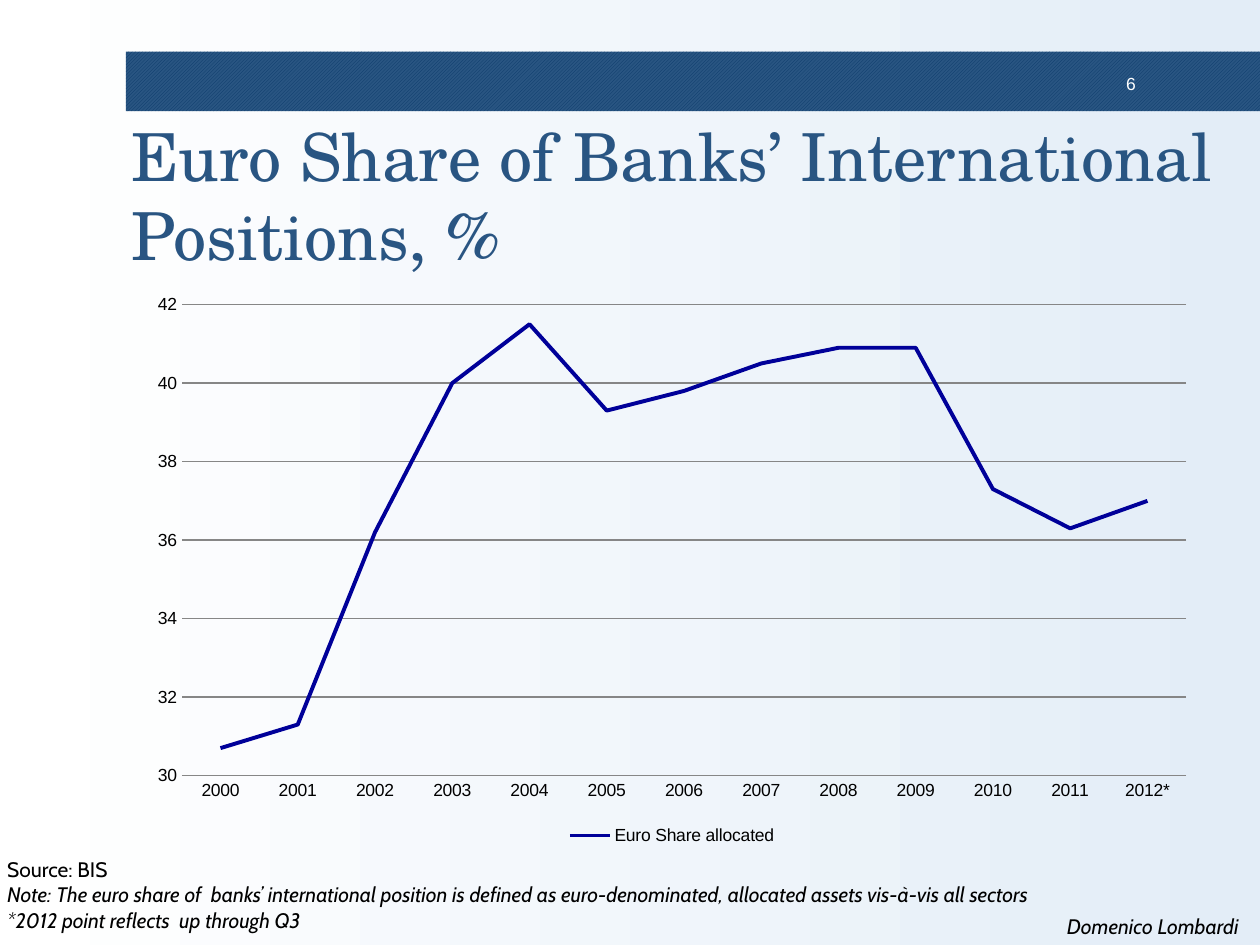
from dataclasses import dataclass

from pptx import Presentation
from pptx.chart.data import CategoryChartData
from pptx.dml.color import RGBColor as Rgb
from pptx.enum.chart import XL_CHART_TYPE as ChartType, XL_LEGEND_POSITION as LegendSide
from pptx.enum.chart import XL_MARKER_STYLE as Marker, XL_TICK_MARK as Tick
from pptx.enum.dml import MSO_PATTERN as Pattern
from pptx.enum.shapes import MSO_SHAPE as Shape
from pptx.enum.text import MSO_ANCHOR as Anchor, PP_ALIGN as Align
from pptx.util import Pt


@dataclass(frozen=True)
class Theme:
    black: Rgb = Rgb.from_string("000000")
    white: Rgb = Rgb.from_string("FFFFFF")
    pale: Rgb = Rgb.from_string("E3EDF7")
    blue: Rgb = Rgb.from_string("295582")
    navy: Rgb = Rgb.from_string("083868")
    series: Rgb = Rgb.from_string("000099")
    grid: Rgb = Rgb.from_string("868686")
    title_font: str = "TeX Gyre Schola"
    note_font: str = "Cabin"
    plain_font: str = "Arial"
    title_size: float = 37.8
    note_size: float = 12
    small_size: float = 10


class SlideBuilder:
    """Draws styled elements on the current slide."""

    def __init__(self, slide, theme):
        self.slide = slide
        self.theme = theme

    def background(self):
        fill = self.slide.background.fill
        fill.gradient()
        fill.gradient_angle = 0
        for stop, color, position in zip(fill.gradient_stops, (self.theme.white, self.theme.pale), (0, 1)):
            stop.color.rgb = color
            stop.position = position

    def band(self, left, top, width, height):
        band = self.slide.shapes.add_shape(Shape.RECTANGLE, Pt(left), Pt(top), Pt(width), Pt(height))
        band.shadow.inherit = False
        band.fill.patterned()
        band.fill.pattern = Pattern.LIGHT_UPWARD_DIAGONAL
        band.fill.fore_color.rgb = self.theme.navy
        band.fill.back_color.rgb = self.theme.blue
        band.line.fill.background()

    def text(self, bounds, lines, font, size, color, align=Align.LEFT,
             anchor=Anchor.TOP, insets=(7.2, 3.6), italic_from=None):
        box = self.slide.shapes.add_textbox(*map(Pt, bounds))
        frame = box.text_frame
        frame.word_wrap = True
        frame.vertical_anchor = anchor
        frame.margin_left = frame.margin_right = Pt(insets[0])
        frame.margin_top = frame.margin_bottom = Pt(insets[1])
        frame.text = "\n".join(lines)
        for index, para in enumerate(frame.paragraphs):
            para.alignment = align
            for span in para.runs:
                span.font.name = font
                span.font.size = Pt(size)
                span.font.color.rgb = color
                span.font.italic = italic_from is not None and index >= italic_from

    def line_chart(self, bounds, categories, name, values, low, high, step):
        data = CategoryChartData(number_format="0.0")
        data.categories = categories
        data.add_series(name, values)
        chart = self.slide.shapes.add_chart(ChartType.LINE, *map(Pt, bounds), data).chart
        chart.has_title = False
        chart.font.name = self.theme.plain_font
        chart.font.size = Pt(self.theme.small_size)
        chart.font.color.rgb = self.theme.black
        chart.has_legend = True
        chart.legend.position = LegendSide.BOTTOM
        chart.legend.include_in_layout = False

        plot = chart.plots[0]
        plot.vary_by_categories = False
        series = plot.series[0]
        series.smooth = False
        series.marker.style = Marker.NONE
        series.format.line.color.rgb = self.theme.series
        series.format.line.width = Pt(2.25)

        for axis in (chart.category_axis, chart.value_axis):
            axis.major_tick_mark = axis.minor_tick_mark = Tick.NONE
        chart.category_axis.format.line.color.rgb = self.theme.grid
        axis = chart.value_axis
        axis.minimum_scale, axis.maximum_scale, axis.major_unit = low, high, step
        axis.tick_labels.number_format = "0"
        axis.tick_labels.number_format_is_linked = False
        axis.format.line.fill.background()
        axis.has_major_gridlines = True
        axis.major_gridlines.format.line.color.rgb = self.theme.grid
        axis.major_gridlines.format.line.width = Pt(0.75)


def main():
    deck = Presentation()
    deck.slide_width, deck.slide_height = Pt(720), Pt(540)
    theme = Theme()
    page = SlideBuilder(deck.slides.add_slide(deck.slide_layouts[6]), theme)

    page.background()
    page.band(72, 29.5, 648, 34)
    page.text((624, 39, 30, 16.5), ["6"], theme.plain_font, theme.small_size, theme.white,
              align=Align.RIGHT, insets=(5, 2.9))
    page.text((-3, 486, 669, 65.5), [
        "Source: BIS",
        "Note: The euro share of  banks’ international position is defined as "
        "euro-denominated, allocated assets vis-à-vis all sectors",
        "*2012 point reflects  up through Q3",
    ], theme.note_font, theme.note_size, theme.black, italic_from=1)
    page.line_chart(
        (78, 162, 612, 324),
        [str(year) for year in range(2000, 2012)] + ["2012*"],
        "Euro Share allocated",
        (30.7, 31.3, 36.2, 40, 41.5, 39.3, 39.8, 40.5, 40.9, 40.9, 37.3, 36.3, 37),
        low=30, high=42, step=2,
    )
    page.text((72, 66, 648, 90), ["Euro Share of Banks’ International Positions, %"],
              theme.title_font, theme.title_size, theme.blue, anchor=Anchor.MIDDLE, insets=(2.9, 2.9))
    page.text((597.5, 518.5, 122.5, 21.5), ["Domenico Lombardi"], theme.note_font, theme.note_size,
              theme.black, align=Align.CENTER, italic_from=0)
    deck.save("out.pptx")


if __name__ == "__main__":
    main()
